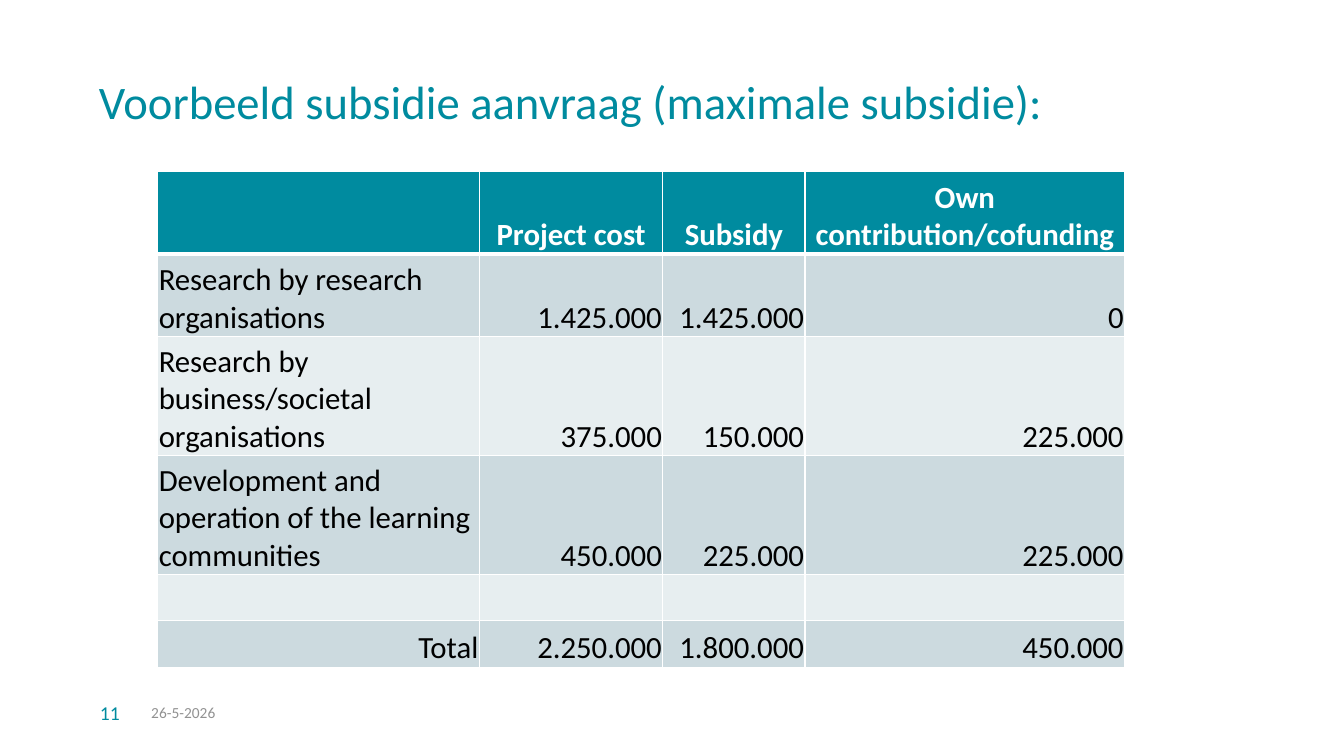
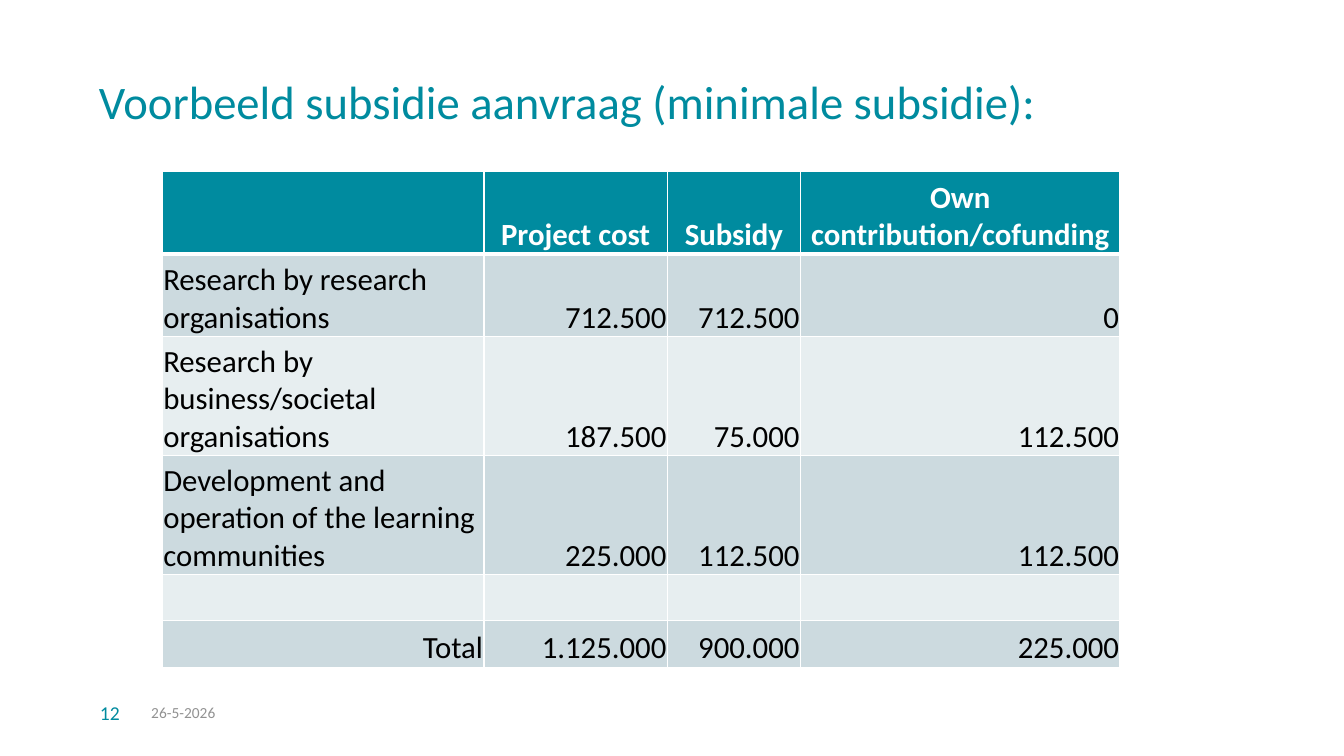
from lxml import etree
from pptx import Presentation
from pptx.dml.color import RGBColor
from pptx.enum.text import MSO_ANCHOR, MSO_AUTO_SIZE, PP_ALIGN
from pptx.oxml.ns import qn
from pptx.util import Inches, Pt

LEFT, MID, RIGHT = PP_ALIGN.LEFT, PP_ALIGN.CENTER, PP_ALIGN.RIGHT
TOP, CENTRE, BASE = MSO_ANCHOR.TOP, MSO_ANCHOR.MIDDLE, MSO_ANCHOR.BOTTOM
NO_FIT = MSO_AUTO_SIZE.NONE

FONT = "Calibri"
TEAL, GREY, BLACK, WHITE = "008B9F", "929292", "000000", "FFFFFF"
BANDS = ["CCDADF", "E7EEF0"]

HEADS = ["", "Project cost", "Subsidy", "Own contribution/cofunding"]
LABELS = [
    "Research by research organisations",
    "Research by business/societal organisations",
    "Development and operation of the learning communities",
]
ROWS = [0.82, 0.82, 1.18, 1.18, 0.46, 0.46]
AXIS = 6.36
DATE = "26-5-2026"


def paint(target, color):
    """Give a fill or font a solid hex colour."""
    if hasattr(target, "solid"):
        target.solid()
        target = target.fore_color
    else:
        target = target.color
    target.rgb = RGBColor.from_string(color)


def write(frame, text, size=22, color=BLACK, bold=False, align=LEFT, line=None, after=0):
    """Write one formatted paragraph into a text frame."""
    para = frame.paragraphs[0]
    para.alignment = align
    para.space_after = Pt(after)
    if line:
        para.line_spacing = line
    run = para.add_run()
    run.text = text
    run.font.name, run.font.size, run.font.bold = FONT, Pt(size), bold
    paint(run.font, color)


def fit(frame, anchor, wrap=True):
    """Clear the insets of a text frame and anchor its text."""
    frame.margin_left = frame.margin_right = 0
    frame.margin_top = frame.margin_bottom = 0
    frame.vertical_anchor = anchor
    frame.word_wrap = wrap
    frame.auto_size = NO_FIT


def add_title(slide, text):
    """Place and fill the title placeholder."""
    title = slide.shapes.title
    title.left, title.top = Inches(0.98), Inches(0.79)
    title.width, title.height = Inches(10.24), Inches(0.59)
    fit(title.text_frame, TOP)
    write(title.text_frame, text, size=33.3, color=TEAL, line=0.9)


def add_note(slide, text, left, top, width, height, **style):
    """Add a footer text box."""
    box = slide.shapes.add_textbox(Inches(left), Inches(top), Inches(width), Inches(height))
    fit(box.text_frame, CENTRE, wrap=False)
    write(box.text_frame, text, after=6, **style)


def add_edge(cell, side, width):
    """Add a white border to one side of a cell."""
    edge = etree.SubElement(cell._tc.get_or_add_tcPr(), qn(f"a:ln{side}"), w=str(Pt(width)))
    fill = etree.SubElement(edge, qn("a:solidFill"))
    etree.SubElement(fill, qn("a:srgbClr"), val=WHITE)


def fill_cell(cell, text, row, col):
    """Format one table cell by its row and column."""
    head = row == 0
    for side in "LRTB":
        thick = (row, side) in [(0, "B"), (1, "T")]
        add_edge(cell, side, 3 if thick else 1)
    paint(cell.fill, TEAL if head else BANDS[(row - 1) % 2])
    cell.margin_left = cell.margin_right = cell.margin_top = Inches(0.01)
    cell.margin_bottom = 0
    cell.vertical_anchor = BASE
    if text:
        align = MID if head else RIGHT if col or text == "Total" else LEFT
        write(cell.text_frame, text, color=WHITE if head else BLACK, bold=head, align=align)


def budget(costs, grants):
    """Return the table text with own shares and totals worked out."""
    def line(label, cost, grant):
        return [label] + [f"{n:,}".replace(",", ".") for n in (cost, grant, cost - grant)]

    body = [line(*item) for item in zip(LABELS, costs, grants)]
    return [HEADS, *body, [""] * 4, line("Total", sum(costs), sum(grants))]


def add_budget(slide, data, cols):
    """Add the budget table, centred on the common axis."""
    width = sum(cols)
    frame = slide.shapes.add_table(
        len(data), len(cols), Inches(AXIS - width / 2), Inches(1.7),
        Inches(width), Inches(sum(ROWS)))
    table = frame.table
    table.horz_banding = False
    for col, size in zip(table.columns, cols):
        col.width = Inches(size)
    for row, size in zip(table.rows, ROWS):
        row.height = Inches(size)
    for row, texts in enumerate(data):
        for col, text in enumerate(texts):
            fill_cell(table.cell(row, col), text, row, col)


def add_slide(deck, number, kind, grant_width, costs, grants):
    """Add one example slide."""
    slide = deck.slides.add_slide(deck.slide_layouts.get_by_name("Title Only"))
    add_title(slide, f"Voorbeeld subsidie aanvraag ({kind} subsidie):")
    add_note(slide, DATE, 1.5, 6.94, 0.83, 0.26, size=11, color=GREY)
    add_note(slide, str(number), 0.99, 6.95, 0.31, 0.25, size=14, color=TEAL)
    add_budget(slide, budget(costs, grants), [3.19, 1.82, grant_width, 3.17])


def main():
    """Build and save the deck."""
    deck = Presentation()
    deck.slide_width, deck.slide_height = Inches(13.33), Inches(7.5)
    add_slide(deck, 11, "maximale", 1.41,
              [1425000, 375000, 450000], [1425000, 150000, 225000])
    add_slide(deck, 12, "minimale", 1.32,
              [712500, 187500, 225000], [712500, 75000, 112500])
    deck.save("out.pptx")


if __name__ == "__main__":
    main()
